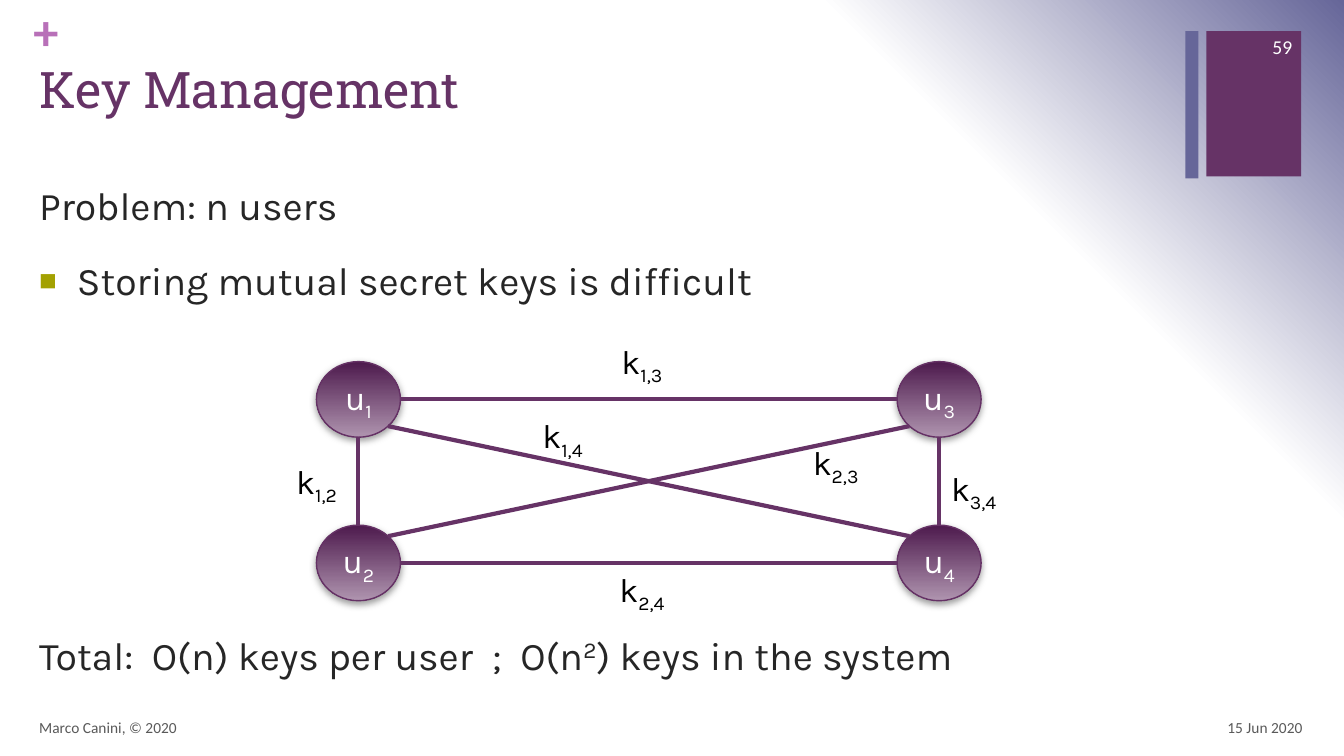
from dataclasses import dataclass
from math import sqrt

from lxml import etree
from pptx import Presentation
from pptx.dml.color import RGBColor
from pptx.enum.shapes import MSO_CONNECTOR, MSO_SHAPE
from pptx.enum.text import MSO_ANCHOR, PP_ALIGN
from pptx.oxml import parse_xml
from pptx.oxml.ns import nsdecls, qn
from pptx.util import Pt

LEFT, CENTER, RIGHT = PP_ALIGN.LEFT, PP_ALIGN.CENTER, PP_ALIGN.RIGHT
TOP, MIDDLE = MSO_ANCHOR.TOP, MSO_ANCHOR.MIDDLE
OVAL, RECTANGLE = MSO_SHAPE.OVAL, MSO_SHAPE.RECTANGLE
STRAIGHT = MSO_CONNECTOR.STRAIGHT
TITLE_ONLY = 5


@dataclass(frozen=True)
class Theme:
    plum: str = "663366"
    slate: str = "666699"
    orchid: str = "B870B8"
    olive: str = "A3A101"
    ink: str = "262626"
    black: str = "000000"
    white: str = "FFFFFF"
    grey: str = "595959"
    user_dark: str = "4D1A4D"
    user_light: str = "AF94AF"
    user_edge: str = "653165"
    shadow: str = "808080"
    heading: str = "Roboto Slab"
    body: str = "Karla"
    small: str = "Calibri"
    title_size: int = 36
    body_size: int = 28
    graph_size: int = 24
    number_size: int = 14
    footer_size: int = 11


THEME = Theme()
USER_W, USER_H = 60, 54
USERS = {"1": (256, 285.3), "2": (256, 402.1), "3": (670.8, 285.3), "4": (670.8, 402.1)}
# key name: left and top of its label
KEYS = {
    "1,3": (434, 239.8),
    "1,4": (377.3, 293),
    "1,2": (201.6, 325.4),
    "2,3": (572.4, 311.8),
    "2,4": (434, 402.5),
    "3,4": (671, 330.5),
}


def rgb(colour):
    return RGBColor.from_string(colour)


def style(paragraph, font, size, colour, align=LEFT):
    paragraph.alignment = align
    paragraph.font.name = font
    paragraph.font.size = Pt(size)
    paragraph.font.color.rgb = rgb(colour)


def add_runs(paragraph, *parts):
    """Add text parts; a (text, percent) pair is raised or lowered."""
    for part in parts:
        text, baseline = part if isinstance(part, tuple) else (part, 0)
        run = paragraph.add_run()
        run.text = text
        if baseline:
            run._r.get_or_add_rPr().set("baseline", str(baseline * 1000))


def add_text(slide, box, parts, font, size, colour, align=LEFT, anchor=TOP, wrap=True):
    frame = slide.shapes.add_textbox(*map(Pt, box)).text_frame
    frame.word_wrap = wrap
    frame.vertical_anchor = anchor
    style(frame.paragraphs[0], font, size, colour, align)
    add_runs(frame.paragraphs[0], *parts)
    return frame


def add_bullet(frame, text):
    item = frame.add_paragraph()
    style(item, THEME.body, THEME.body_size, THEME.ink)
    item.space_before = Pt(20)
    add_runs(item, text)
    props = item._p.get_or_add_pPr()
    props.set("marL", str(Pt(27)))
    props.set("indent", str(-Pt(27)))
    marks = parse_xml(
        f'<a:pPr {nsdecls("a")}><a:buClr><a:srgbClr val="{THEME.olive}"/></a:buClr>'
        '<a:buSzPct val="75000"/><a:buFont typeface="Arial"/><a:buChar char="■"/></a:pPr>')
    defaults = props.find(qn("a:defRPr"))
    for mark in list(marks):
        defaults.addprevious(mark)


def add_bar(slide, box, colour):
    bar = slide.shapes.add_shape(RECTANGLE, *map(Pt, box))
    bar.shadow.inherit = False
    bar.fill.solid()
    bar.fill.fore_color.rgb = rgb(colour)
    bar.line.fill.background()


def set_background(slide):
    """Fade from white to slate, circling out from the bottom left corner."""
    slide.background.fill.gradient()
    stops = "".join(
        f'<a:gs pos="{pos}000"><a:srgbClr val="{colour}"/></a:gs>'
        for pos, colour in ((0, THEME.white), (75, THEME.white), (100, THEME.slate)))
    fade = parse_xml(
        f'<a:gradFill {nsdecls("a")} rotWithShape="1"><a:gsLst>{stops}</a:gsLst>'
        '<a:path path="circle"><a:fillToRect t="100000" r="100000"/></a:path></a:gradFill>')
    default = slide.element.find(".//" + qn("a:gradFill"))
    default.getparent().replace(default, fade)


def add_user(slide, number):
    x, y = USERS[number]
    user = slide.shapes.add_shape(
        OVAL, Pt(x - USER_W / 2), Pt(y - USER_H / 2), Pt(USER_W), Pt(USER_H))
    user.fill.gradient()
    user.fill.gradient_angle = 270
    for stop, pos, colour in zip(
            user.fill.gradient_stops, (0, 1), (THEME.user_dark, THEME.user_light)):
        stop.position = pos
        stop.color.rgb = rgb(colour)
    user.line.color.rgb = rgb(THEME.user_edge)
    user.line.width = Pt(1)
    user.shadow.inherit = False
    user._element.spPr.find(qn("a:effectLst")).append(parse_xml(
        f'<a:outerShdw {nsdecls("a")} blurRad="{Pt(5)}" dist="{Pt(2)}" dir="5400000" '
        f'rotWithShape="0"><a:srgbClr val="{THEME.shadow}"><a:alpha val="75000"/>'
        '</a:srgbClr></a:outerShdw>'))
    user.text_frame.vertical_anchor = MIDDLE
    label = user.text_frame.paragraphs[0]
    style(label, THEME.body, THEME.graph_size, THEME.white, CENTER)
    add_runs(label, "u", (number, -25))


def rim_point(start, end):
    """Point on the rim of the user at start, on the side or corner facing end."""
    (x, y), (to_x, to_y) = start, end
    across = (to_x > x) - (to_x < x)
    down = (to_y > y) - (to_y < y)
    reach = 1 / sqrt(2) if across and down else 1
    return Pt(x + across * reach * USER_W / 2), Pt(y + down * reach * USER_H / 2)


def add_key(slide, key, place):
    start, end = (USERS[number] for number in key.split(","))
    link = slide.shapes.add_connector(STRAIGHT, *rim_point(start, end), *rim_point(end, start))
    link.line.color.rgb = rgb(THEME.plum)
    link.line.width = Pt(3)
    etree.SubElement(link._element.spPr, qn("a:effectLst"))
    add_text(slide, (*place, 49, 36), ("k", (key, -25)), THEME.body, THEME.graph_size,
             THEME.black, CENTER, wrap=False)


def set_title(slide, text):
    title = slide.shapes.title
    title.left, title.top, title.width, title.height = map(Pt, (20.9, 38.2, 824.4, 87.8))
    title.text_frame.text = text
    title.text_frame.vertical_anchor = TOP
    style(title.text_frame.paragraphs[0], THEME.heading, THEME.title_size, THEME.plum)


def main():
    deck = Presentation()
    deck.slide_width, deck.slide_height = Pt(960), Pt(540)
    slide = deck.slides.add_slide(deck.slide_layouts[TITLE_ONLY])
    set_background(slide)
    add_bar(slide, (861.8, 22.3, 67.7, 103.7), THEME.plum)
    add_bar(slide, (846.7, 22.3, 9.4, 105.1), THEME.slate)
    plus = add_text(slide, (23.8, 0, 27.4, 43.9), ("+",), THEME.small, THEME.title_size,
                    THEME.orchid)
    plus.margin_left = plus.margin_top = plus.margin_right = plus.margin_bottom = 0
    plus.paragraphs[0].font.bold = True
    set_title(slide, "Key Management")

    body = (THEME.body, THEME.body_size, THEME.ink)
    problem = add_text(slide, (20.9, 126, 916.6, 100), ("Problem: n users",), *body)
    add_bullet(problem, "Storing mutual secret keys is difficult")
    add_text(slide, (20.9, 447.5, 916.6, 42),
             ("Total:  O(n) keys per user  ;  O(n", ("2", 30), ") keys in the system"), *body)

    for number in USERS:
        add_user(slide, number)
    for key, place in KEYS.items():
        add_key(slide, key, place)

    footer = (THEME.small, THEME.footer_size, THEME.grey)
    add_text(slide, (713.5, 505.4, 224, 28.8), ("15 Jun 2020",), *footer, RIGHT, MIDDLE)
    add_text(slide, (20.9, 505.4, 643, 28.8), ("Marco Canini, © 2020",), *footer, LEFT, MIDDLE)
    add_text(slide, (871.9, 18.7, 58.3, 28.8), ("59",), THEME.small, THEME.number_size,
             THEME.white, RIGHT, MIDDLE)
    deck.save("out.pptx")


if __name__ == "__main__":
    main()
